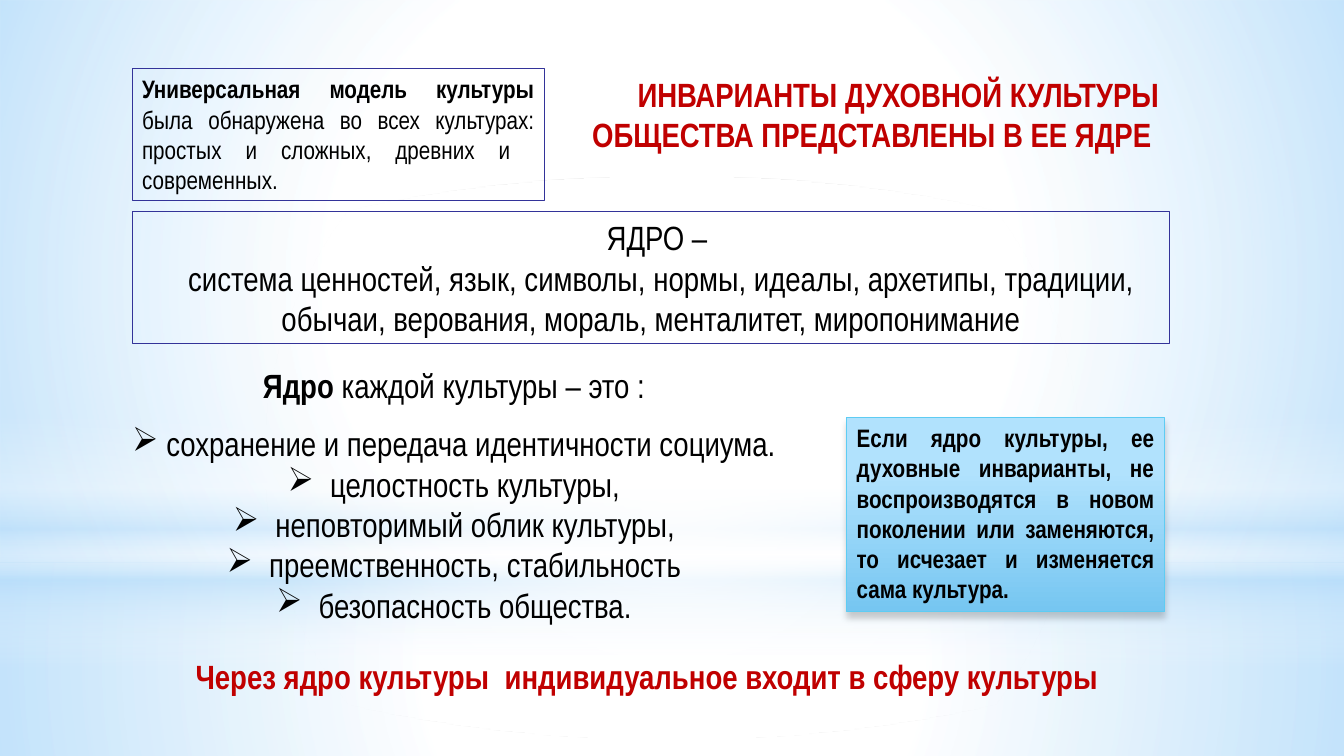
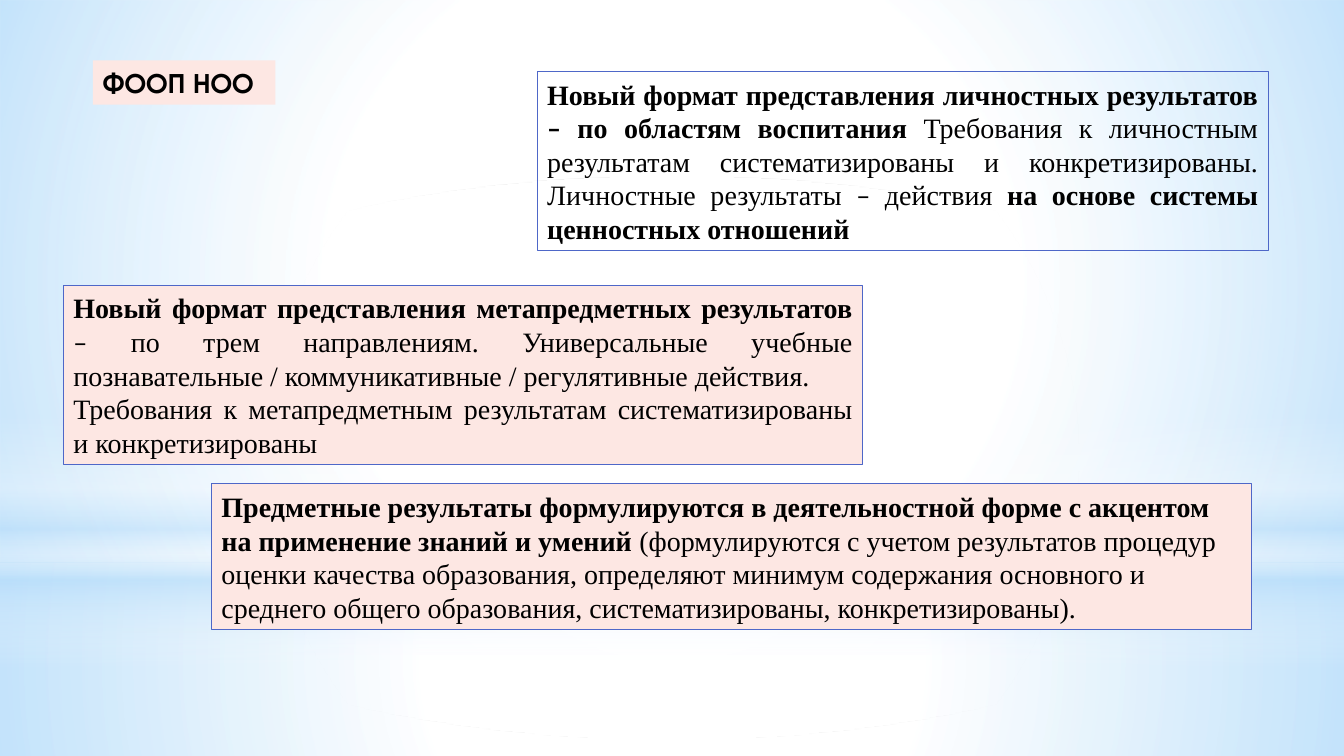
from lxml import etree
from pptx import Presentation
from pptx.dml.color import RGBColor
from pptx.enum import shapes, text
from pptx.oxml import ns
from pptx.util import Cm, Pt

WHITE = RGBColor(0xFF, 0xFF, 0xFF)
BLACK = RGBColor(0, 0, 0)
RED = RGBColor(0xC0, 0, 0)
NAVY = RGBColor(0x33, 0x33, 0x99)
BLUE = RGBColor(0x4E, 0x67, 0xC8)
CYAN = RGBColor(0x5E, 0xCC, 0xF3)
SKY = RGBColor(0xB4, 0xDC, 0xFA)
PALE = RGBColor(0xB1, 0xE2, 0xFD)
DEEP = RGBColor(0x76, 0xC6, 0xF1)
PINK = RGBColor(0xFD, 0xE7, 0xE3)

NARROW = "Arial Narrow"
SERIF = "Times New Roman"
SANS = "Calibri"
WIDE, HIGH = 33.87, 19.05

ALIGN = text.PP_ALIGN
MID = text.MSO_ANCHOR.MIDDLE
RECT = shapes.MSO_SHAPE.RECTANGLE
OVAL = shapes.MSO_SHAPE.OVAL


# Elements
def node(parent, tag, **attrs):
    child = etree.SubElement(parent, ns.qn("a:" + tag))
    for key, value in attrs.items():
        child.set(key, str(value))
    return child


def tint(parent, color, alpha):
    node(node(parent, "srgbClr", val=color), "alpha", val=alpha * 1000)


def shade(shape, stops, angle=None):
    """Gradient of (position, colour, opacity); round without an angle."""
    shape.fill.background()
    props = shape.element.spPr
    grad = etree.Element(ns.qn("a:gradFill"), rotWithShape="1")
    props.replace(props.find(ns.qn("a:noFill")), grad)
    row = node(grad, "gsLst")
    for pos, color, alpha in stops:
        tint(node(row, "gs", pos=pos * 1000), color, alpha)
    if angle is None:
        round_ = node(grad, "path", path="circle")
        node(round_, "fillToRect", l=50000, t=50000, r=50000, b=50000)
    else:
        node(grad, "lin", ang=angle * 60000, scaled=0)


def drop(shape):
    """Soft shadow below the shape."""
    effects = shape.element.spPr.find(ns.qn("a:effectLst"))
    shadow = node(effects, "outerShdw", blurRad=Pt(5), dist=Pt(4),
                  dir=90 * 60000, rotWithShape=0)
    tint(shadow, BLACK, 20)


def panel(slide, place, fill=None, line=None, kind=RECT):
    shape = slide.shapes.add_shape(kind, *map(Cm, place))
    shape.shadow.inherit = False
    if fill is None:
        shape.fill.background()
    else:
        shape.fill.solid()
        shape.fill.fore_color.rgb = fill
    if line is None:
        shape.line.fill.background()
    else:
        shape.line.color.rgb = line
        shape.line.width = Pt(0.75)
    return shape


def write(shape, *paras, size=24, font=NARROW, color=BLACK, align=ALIGN.CENTER,
          anchor=text.MSO_ANCHOR.TOP, wrap=True, indent=0, hangs=None, gap=0):
    """Each paragraph is a list of (text, bold[, font]) runs.

    hangs gives the bullet indent of each paragraph (0 for no bullet),
    gap the space before the first bullet.
    """
    frame = shape.text_frame
    frame.word_wrap = wrap
    frame.vertical_anchor = anchor
    hangs = hangs or [0] * len(paras)
    for i, (runs, hang) in enumerate(zip(paras, hangs)):
        para = frame.paragraphs[0] if i == 0 else frame.add_paragraph()
        para.alignment = align
        props = para._p.get_or_add_pPr()
        if hang:
            props.set("marL", str(Cm(hang)))
            props.set("indent", str(-Cm(hang)))
            node(props, "buChar", char="➢")
            if not hangs[i - 1]:
                para.space_before = Pt(gap)
        elif indent:
            props.set("indent", str(Cm(indent)))
        for words, bold, *face in runs:
            run = para.add_run()
            run.text = words
            run.font.size = Pt(size)
            run.font.bold = bold
            run.font.name = face[0] if face else font
            run.font.color.rgb = color


def label(slide, place, *paras, **style):
    write(slide.shapes.add_textbox(*map(Cm, place)), *paras, **style)


# Shared background, kept on the master
def backdrop(deck, slide):
    split = 14.17
    parts = [
        (RECT, (0, split, WIDE, HIGH - split), None,
         [(0, WHITE, 91), (37, WHITE, 76), (100, SKY, 79)]),
        (RECT, (0, 0, WIDE, split), None,
         [(0, WHITE, 89), (48, WHITE, 62), (100, SKY, 79)]),
        (RECT, (0, 10.46, WIDE, 6.35), 90,
         [(0, WHITE, 0), (29, WHITE, 30), (45, SKY, 40),
          (55, WHITE, 26), (65, SKY, 60), (100, WHITE, 0)]),
        (OVAL, (0, 4.45, WIDE, split), None,
         [(0, WHITE, 100), (56, WHITE, 0)]),
    ]
    tree = deck.slide_master.shapes.element
    for i, (kind, place, angle, stops) in enumerate(parts):
        shape = panel(slide, place, kind=kind)
        shade(shape, stops, angle)
        shape.element.nvSpPr.cNvPr.set("id", str(100 + i))
        tree.insert(2 + i, shape.element)


# Slide 1
def core(slide):
    label(slide, (12.52, 1.73, 16.94, 2.31),
          [("ИНВАРИАНТЫ ДУХОВНОЙ КУЛЬТУРЫ ОБЩЕСТВА ПРЕДСТАВЛЕНЫ В ЕЕ ЯДРЕ ",
            True)], color=RED, align=ALIGN.RIGHT)

    write(panel(slide, (3.33, 5.33, 26.14, 3.33), line=NAVY),
          [("ЯДРО – ", False)],
          [("система ценностей, язык, символы, нормы, идеалы, архетипы, "
            "традиции, обычаи, верования, мораль, менталитет, "
            "миропонимание", False)],
          anchor=MID, indent=0.51)

    roles = ["сохранение и передача идентичности социума. ",
             "целостность культуры, ",
             "неповторимый облик культуры, ",
             "преемственность, стабильность ",
             "безопасность общества. "]
    label(slide, (2.34, 8.92, 18.39, 7.09),
          [("Ядро", True), (" каждой культуры – это : ", False)],
          *[[(role, False)] for role in roles],
          anchor=MID, hangs=[0, 0.86] + [1.07] * 4, gap=13)

    note = panel(slide, (21.34, 10.52, 8, 4.88), line=CYAN)
    shade(note, [(28, PALE, 100), (100, DEEP, 100)], 90)
    drop(note)
    write(note,
          [("Если ядро культуры, ее духовные инварианты, не воспроизводятся "
            "в новом поколении или заменяются, то исчезает и изменяется "
            "сама культура. ", True)], size=18, align=ALIGN.JUSTIFY)

    write(panel(slide, (3.33, 1.73, 10.39, 3.33), line=NAVY),
          [("Универсальная модель культуры", True),
           (" была обнаружена во всех культурах: простых и сложных, "
            "древних и  современных.", False)],
          size=18, align=ALIGN.JUSTIFY)

    label(slide, (3.8, 16.4, 25, 1.3),
          [("Через ядро культуры  индивидуальное входит в сферу культуры",
            True)], color=RED)


# Slide 2
def results(slide):
    body = dict(size=20, font=SERIF, align=ALIGN.JUSTIFY, anchor=MID)

    write(panel(slide, (13.54, 1.8, 18.42, 4.52), line=BLUE),
          [("Новый формат представления личностных результатов ", True),
           ("–", True, SANS),
           (" по областям воспитания ", True),
           ("Требования к личностным результатам систематизированы и "
            "конкретизированы. Личностные результаты ", False),
           ("–", False, SANS),
           (" действия ", False),
           ("на основе системы ценностных отношений", True)], **body)

    write(panel(slide, (1.6, 7.19, 20.14, 4.52), PINK, BLUE),
          [("Новый формат представления метапредметных результатов ", True),
           ("–", False, SANS),
           (" по трем направлениям. Универсальные учебные познавательные / "
            "коммуникативные / регулятивные действия.", False)],
          [("Требования к метапредметным результатам систематизированы и "
            "конкретизированы", False)], **body)

    write(panel(slide, (5.33, 12.19, 26.21, 3.68), PINK, BLUE),
          [("Предметные результаты формулируются в деятельностной форме с "
            "акцентом на применение знаний и умений", True),
           (" (формулируются с учетом результатов процедур оценки качества "
            "образования, определяют минимум содержания основного и среднего "
            "общего образования, систематизированы, конкретизированы).",
            False)], **{**body, "align": ALIGN.LEFT})

    write(panel(slide, (2.34, 1.52, 4.6, 1.12), PINK),
          [("ФООП НОО", True)], size=20, font="TeX Gyre Adventor",
          align=ALIGN.LEFT, anchor=MID, wrap=False)


def main():
    deck = Presentation()
    deck.slide_width, deck.slide_height = Cm(WIDE), Cm(HIGH)
    pages = [deck.slides.add_slide(deck.slide_layouts[6]) for _ in range(2)]
    backdrop(deck, pages[0])
    core(pages[0])
    results(pages[1])
    deck.save("out.pptx")


if __name__ == "__main__":
    main()
